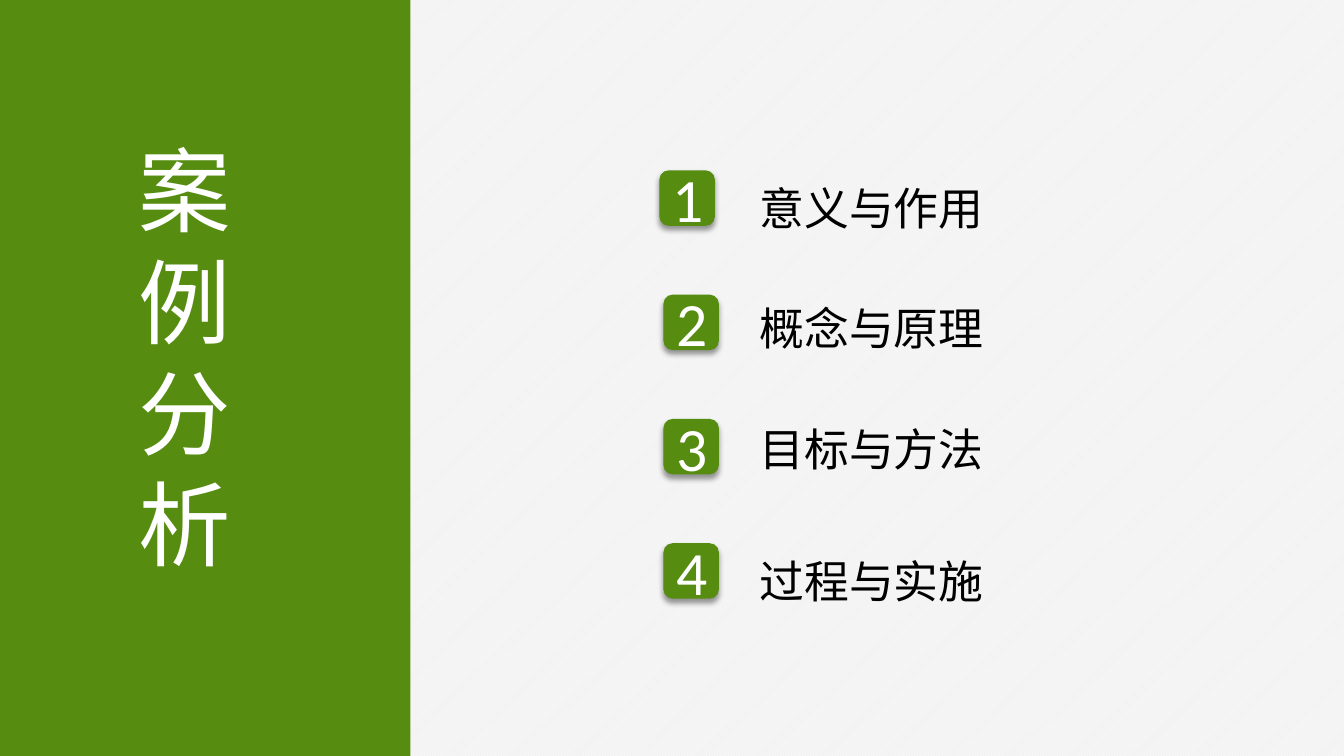
from lxml import etree
from pptx import Presentation
from pptx.dml.color import RGBColor
from pptx.enum.dml import MSO_PATTERN
from pptx.enum.shapes import MSO_SHAPE
from pptx.enum.text import MSO_ANCHOR, MSO_AUTO_SIZE, PP_ALIGN
from pptx.oxml.ns import qn
from pptx.util import Inches, Pt

CENTER = PP_ALIGN.CENTER
TOP, MIDDLE = MSO_ANCHOR.TOP, MSO_ANCHOR.MIDDLE
GROW = MSO_AUTO_SIZE.SHAPE_TO_FIT_TEXT
RECTANGLE, ROUNDED = MSO_SHAPE.RECTANGLE, MSO_SHAPE.ROUNDED_RECTANGLE
DIAGONAL = MSO_PATTERN.LIGHT_UPWARD_DIAGONAL
COLORS = {"green": "568D11", "white": "FFFFFF", "black": "000000", "paper": "F2F2F2"}
LATIN, CHINESE = "Calibri", "Noto Sans CJK SC"
TITLE_ONLY = 5
CELL = 0.1
PANEL_COLUMNS, PAGE_ROWS = 40.7, 75
BADGE_SIZE, BADGE_ROW, BADGE_STEP = 5.5, 16.9, 12.33
LABEL_COLUMN = 74.2
AGENDA = [
    ("意义与作用", 65.4, 17),
    ("概念与原理", 65.8, 29),
    ("目标与方法", 65.8, 41),
    ("过程与实施", 65.8, 54.1),
]


def color(name):
    return RGBColor.from_string(COLORS[name])


def cells(count):
    return Inches(count * CELL)


class AgendaSlide:
    def __init__(self, deck):
        self.page = deck.slides.add_slide(deck.slide_layouts[TITLE_ONLY])
        fill = self.page.background.fill
        fill.patterned()
        fill.pattern = DIAGONAL
        fill.fore_color.rgb = color("white")
        fill.back_color.rgb = color("paper")

    def set_text(self, box, text, size, font, ink, spacing=None):
        frame = box.text_frame
        frame.text = text
        for para in frame.paragraphs:
            para.alignment = CENTER
            if spacing:
                para.line_spacing = Pt(spacing)
            for span in para.runs:
                span.font.size = Pt(size)
                span.font.name = font
                span.font.color.rgb = color(ink)
                properties = span.font._element
                east_asian = etree.SubElement(properties, qn("a:ea"))
                east_asian.set("typeface", font)

    def fit(self, box, top, bottom):
        frame = box.text_frame
        frame.word_wrap = False
        frame.auto_size = GROW
        frame.vertical_anchor = TOP
        frame.margin_top, frame.margin_bottom = cells(top), cells(bottom)

    def block(self, kind, column, row, width, height):
        box = self.page.shapes.add_shape(
            kind, cells(column), cells(row), cells(width), cells(height))
        box.shadow.inherit = False
        box.fill.solid()
        box.fill.fore_color.rgb = color("green")
        box.line.fill.background()
        return box

    def badge(self, number, column, row):
        box = self.block(ROUNDED, column, row, BADGE_SIZE, BADGE_SIZE)
        effects = box.element.spPr.find(qn("a:effectLst"))
        shadow = etree.SubElement(
            effects, qn("a:outerShdw"), blurRad=str(Pt(4)), dist=str(Pt(3)),
            dir="5400000", algn="t", rotWithShape="0")
        tint = etree.SubElement(shadow, qn("a:srgbClr"), val=COLORS["black"])
        etree.SubElement(tint, qn("a:alpha"), val="40000")
        self.set_text(box, str(number), 44, LATIN, "white")
        box.text_frame.vertical_anchor = MIDDLE

    def label(self, text, row):
        box = self.page.shapes.add_textbox(
            cells(LABEL_COLUMN), cells(row), cells(24.5), cells(6.4))
        self.set_text(box, text, 32, CHINESE, "black", spacing=39)
        self.fit(box, 0.8, 0.2)

    def title(self, text):
        box = self.page.shapes.title
        box.left, box.top = cells(12.7), cells(12)
        box.width, box.height = cells(11.3), cells(45.4)
        self.set_text(box, "\n".join(text), 66, CHINESE, "white", spacing=79.5)
        self.fit(box, 1.2, 0)
        box.element.getparent().append(box.element)


def main():
    deck = Presentation()
    deck.slide_width, deck.slide_height = Inches(13.33), Inches(7.5)
    agenda = AgendaSlide(deck)
    for index, (text, badge_column, label_row) in enumerate(AGENDA):
        agenda.badge(index + 1, badge_column, BADGE_ROW + index * BADGE_STEP)
        agenda.label(text, label_row)
    agenda.block(RECTANGLE, 0, 0, PANEL_COLUMNS, PAGE_ROWS)
    agenda.title("案例分析")
    deck.save("out.pptx")


if __name__ == "__main__":
    main()
